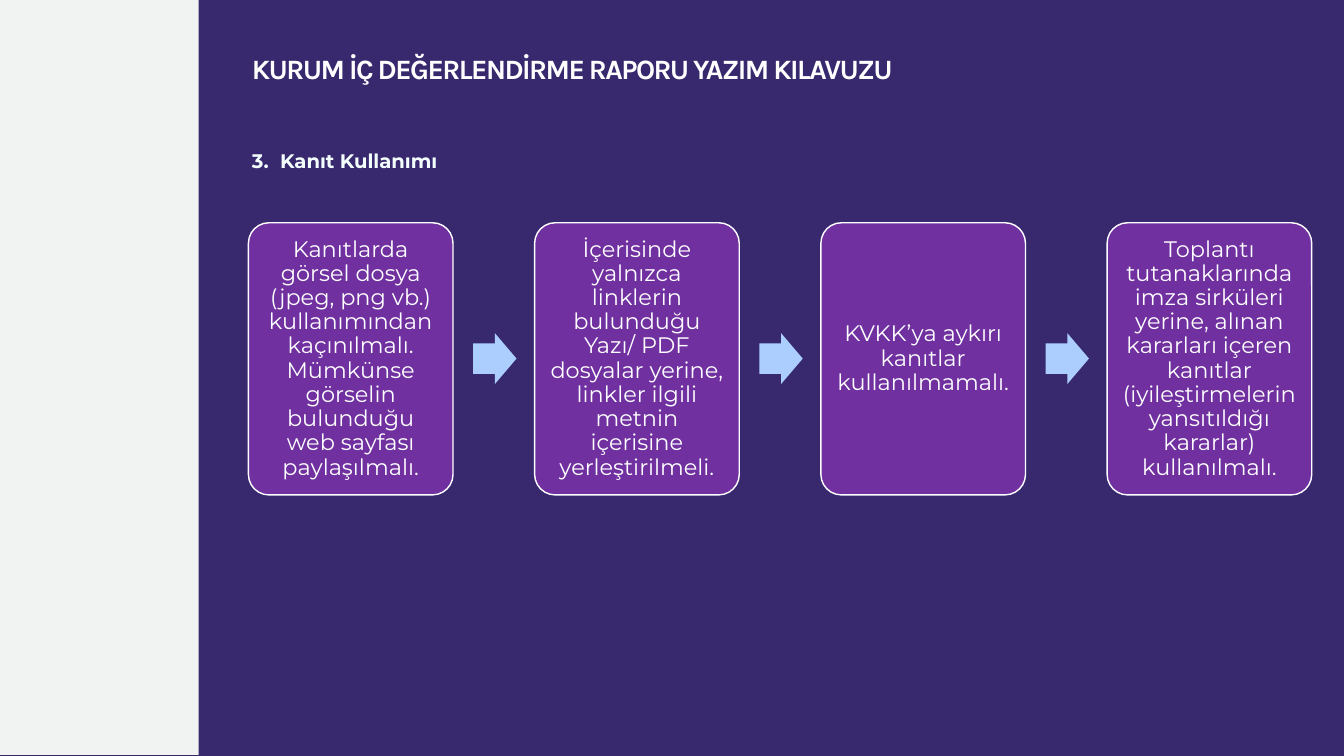
import pptx
import pptx.util
import pptx.dml.color
import pptx.enum.shapes
import pptx.enum.text
import pptx.oxml.ns
import lxml.etree

RGB = pptx.dml.color.RGBColor
SHAPE = pptx.enum.shapes.MSO_SHAPE
ALIGN = pptx.enum.text.PP_ALIGN
Pt = pptx.util.Pt

# Content
TITLE = "KURUM İÇ DEĞERLENDİRME RAPORU YAZIM KILAVUZU"
HEAD = "Kanıt Kullanımı"
STEPS = [
    "Kanıtlarda görsel dosya (jpeg, png vb.) kullanımından kaçınılmalı. "
    "Mümkünse görselin bulunduğu web sayfası paylaşılmalı.",
    "İçerisinde yalnızca linklerin bulunduğu Yazı/ PDF dosyalar yerine, "
    "linkler ilgili metnin içerisine yerleştirilmeli.",
    "KVKK’ya aykırı kanıtlar kullanılmamalı.",
    "Toplantı tutanaklarında imza sirküleri yerine, alınan kararları içeren "
    "kanıtlar (iyileştirmelerin yansıtıldığı kararlar) kullanılmalı.",
]

# Colours
NAVY = RGB(0x38, 0x29, 0x6E)
PALE = RGB(0xF1, 0xF3, 0xF2)
PURPLE = RGB(0x70, 0x30, 0xA0)
BLUE = RGB(0xAB, 0xCE, 0xFF)
WHITE = RGB(0xFF, 0xFF, 0xFF)
MINT = RGB(0xF4, 0xFF, 0xFD)

# Measures in px, 100 to the inch
PX = 9144
LEFT, TOP, WIDE, HIGH = 493, 442, 406, 540
PITCH = 568
ARROW_W, ARROW_H, ARROW_GAP = 86, 101, 40


def px(*nums):
    return [pptx.util.Emu(n * PX) for n in nums]


def add_box(kind, box, fill):
    shape = slide.shapes.add_shape(kind, *px(*box))
    shape.shadow.inherit = False
    shape.fill.solid()
    shape.fill.fore_color.rgb = fill
    shape.line.fill.background()
    return shape


def set_text(shape, text, size, name, color, bold, align, space, inset):
    frame = shape.text_frame
    frame.word_wrap = True
    frame.auto_size = pptx.enum.text.MSO_AUTO_SIZE.NONE
    frame.vertical_anchor = pptx.enum.text.MSO_ANCHOR.MIDDLE
    (frame.margin_left, frame.margin_top,
     frame.margin_right, frame.margin_bottom) = px(*[inset] * 4)
    para = frame.paragraphs[0]
    para.text = text
    para.alignment = align
    para.line_spacing = space
    font = para.font
    font.size, font.name, font.bold = Pt(size), name, bold
    font.color.rgb = color
    return para


deck = pptx.Presentation()
deck.slide_width, deck.slide_height = px(2667, 1500)
slide = deck.slides.add_slide(deck.slide_layouts[5])
slide.background.fill.solid()
slide.background.fill.fore_color.rgb = NAVY

# Side band
add_box(SHAPE.RECTANGLE, (0, -2, 394, 1500), PALE)

# Title
title = slide.shapes.title
title.left, title.top, title.width, title.height = px(492, 61, 1764, 117)
para = set_text(title, TITLE, 40, "Karla", WHITE, True, ALIGN.LEFT, 1.5, 8)
para.runs[0].font._element.set("spc", "-220")

# Numbered heading
head = slide.shapes.add_textbox(*px(492, 265, 2111, 86))
para = head.text_frame.paragraphs[0]
props = para._p.get_or_add_pPr()
props.set("marL", str(56 * PX))
props.set("indent", str(-56 * PX))
lxml.etree.SubElement(props, pptx.oxml.ns.qn("a:buAutoNum"),
                      type="arabicPeriod", startAt="3")
set_text(head, HEAD, 28, "Montserrat", MINT, True, ALIGN.JUSTIFY, 1.5, 8)

# Step cards with arrows between them
for i, text in enumerate(STEPS):
    x = LEFT + i * PITCH
    card = add_box(SHAPE.ROUNDED_RECTANGLE, (x, TOP, WIDE, HIGH), PURPLE)
    card.adjustments[0] = 0.1
    card.line.color.rgb = WHITE
    card.line.width = Pt(2)
    set_text(card, text, 32, "Montserrat", WHITE, False, ALIGN.CENTER, 0.9, 13)
    if i < len(STEPS) - 1:
        y = TOP + (HIGH - ARROW_H) // 2
        arrow = add_box(SHAPE.RIGHT_ARROW,
                        (x + WIDE + ARROW_GAP, y, ARROW_W, ARROW_H), BLUE)
        arrow.adjustments[0] = 0.6
        arrow.adjustments[1] = 0.5

deck.save("out.pptx")
